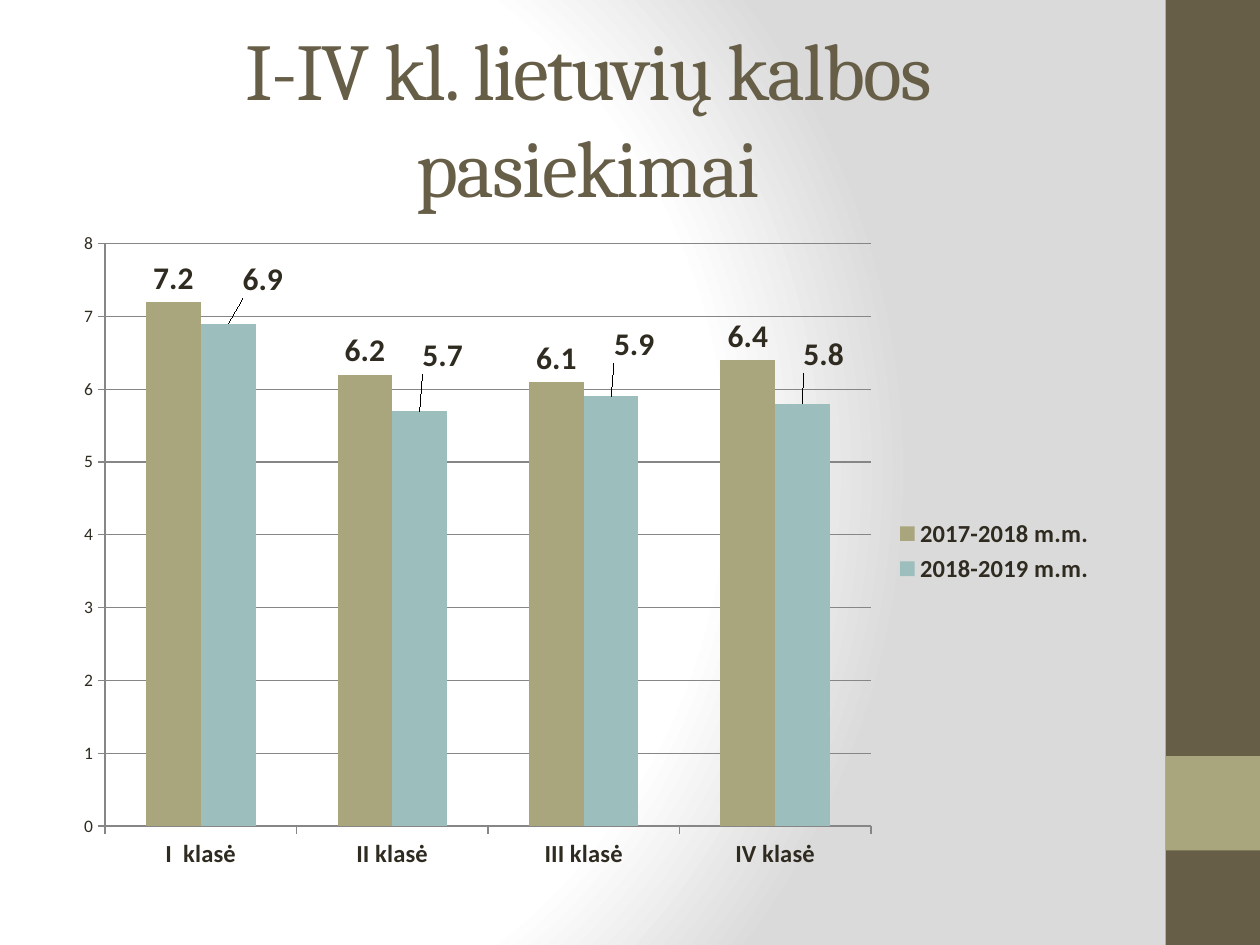
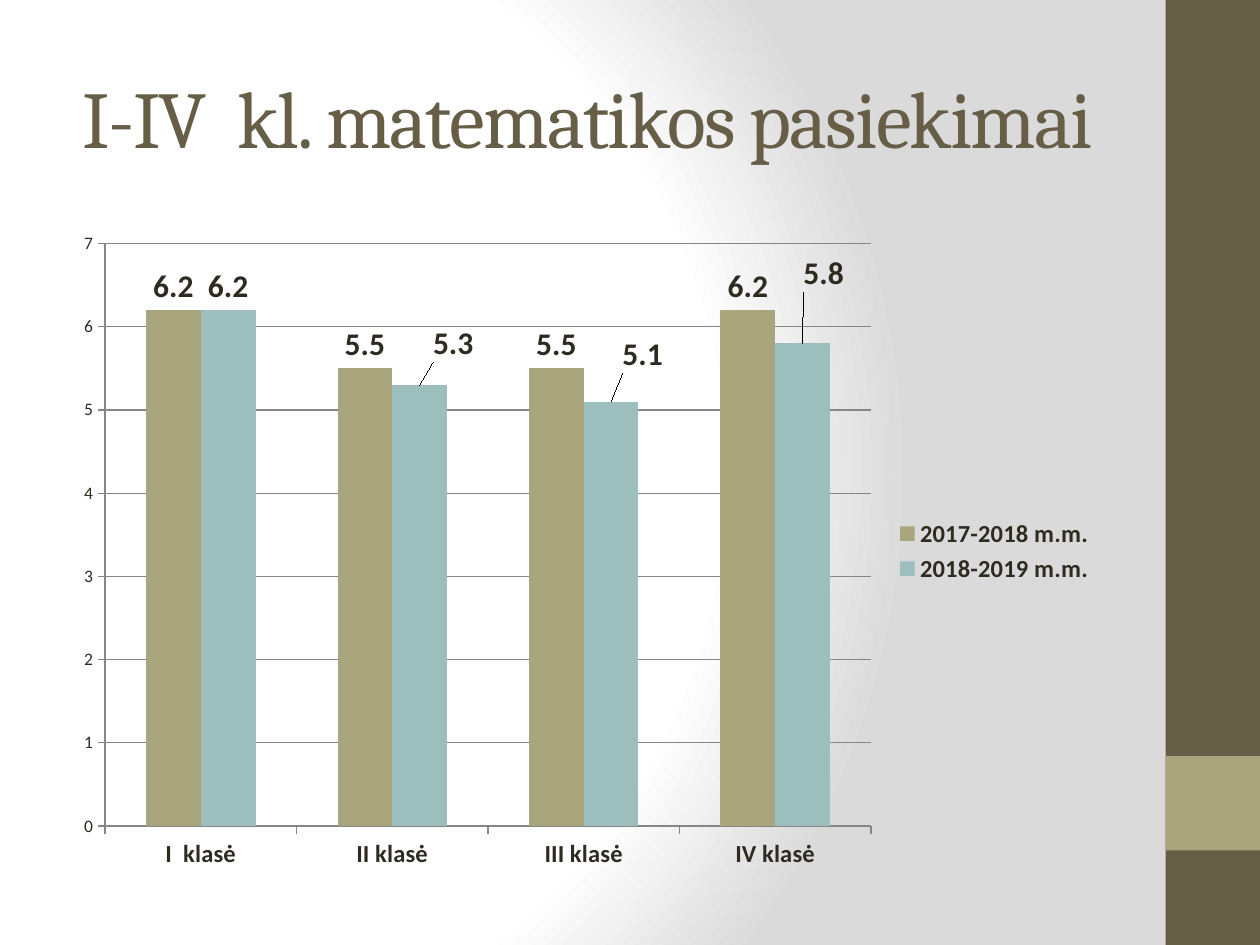
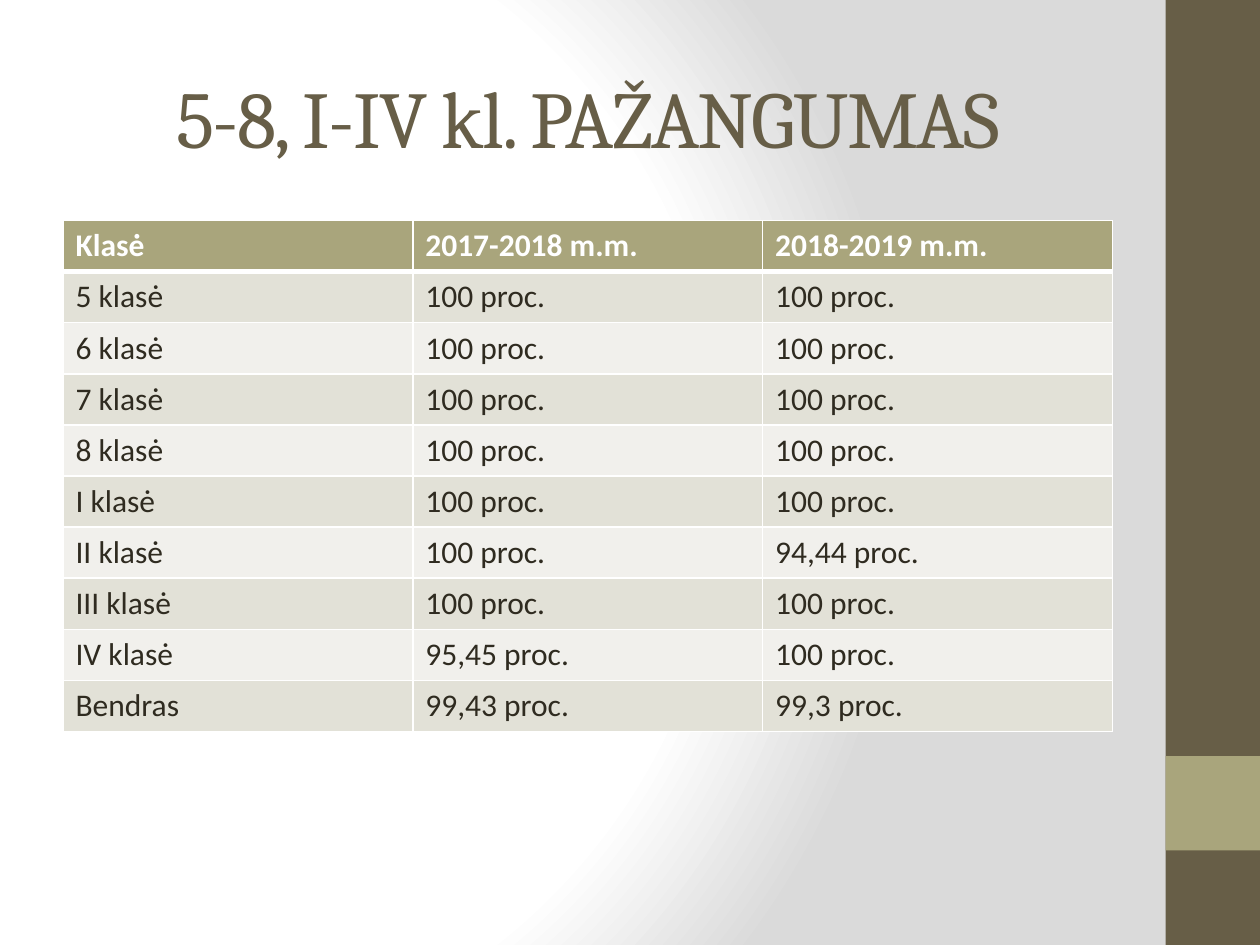
from pptx import Presentation
from pptx.chart.data import CategoryChartData
from pptx.dml.color import RGBColor
from pptx.enum.chart import XL_CHART_TYPE, XL_LABEL_POSITION, XL_LEGEND_POSITION, XL_TICK_MARK
from pptx.enum.shapes import MSO_SHAPE
from pptx.enum.text import MSO_ANCHOR, MSO_AUTO_SIZE, PP_ALIGN
from pptx.oxml import parse_xml
from pptx.oxml.ns import nsdecls
from pptx.util import Inches, Pt

RECTANGLE = MSO_SHAPE.RECTANGLE
CLUSTERED = XL_CHART_TYPE.COLUMN_CLUSTERED
OUTSIDE_END = XL_LABEL_POSITION.OUTSIDE_END
LEGEND_RIGHT = XL_LEGEND_POSITION.RIGHT
TICK_OUT = XL_TICK_MARK.OUTSIDE
MIDDLE = MSO_ANCHOR.MIDDLE
NO_FIT = MSO_AUTO_SIZE.NONE
CENTER = PP_ALIGN.CENTER

COLORS = {
    "brown": "675E47", "olive": "A9A57C", "teal": "9CBEBD", "ink": "2F2B20",
    "white": "FFFFFF", "fog": "DADADA", "axis": "868686",
    "band_dark": "E2E1D7", "band_light": "F1F0EC",
}
HEADING_FONT, BODY_FONT = "Cambria", "Calibri"
COLUMNS, ROWS = 40, 30
CONTENT_LEFT, CONTENT_WIDTH, CONTENT_TOP = 2, 33.32, 7
YEARS = ("2017-2018 m.m.", "2018-2019 m.m.")
CLASSES = ("I  klasė", "II klasė", "III klasė", "IV klasė")


def rgb(name):
    """Return the named colour."""
    return RGBColor.from_string(COLORS[name])


def style_font(font, size, color="ink", bold=False, face=BODY_FONT):
    """Apply the deck's type settings to a font."""
    font.name, font.size, font.bold = face, Pt(size), bold
    font.color.rgb = rgb(color)


class Deck:
    """Hold the shared style and the current slide."""

    def __init__(self):
        """Set up the slide size, background and side bands."""
        self.prs = Presentation()
        self.prs.slide_width, self.prs.slide_height = Inches(10), Inches(7.5)
        self.slide = None
        self.paint_background()

    def box(self, left, top, width, height):
        """Turn grid columns and rows into slide lengths."""
        column, row = self.prs.slide_width / COLUMNS, self.prs.slide_height / ROWS
        return [round(n * unit) for n, unit in
                ((left, column), (top, row), (width, column), (height, row))]

    def paint_background(self):
        """Give the master its radial gradient."""
        fill = self.prs.slide_master.background.fill
        fill.gradient()
        gradient = self.prs.slide_master.element.xpath("./p:cSld/p:bg//a:gradFill")[0]
        stops = "".join(
            f'<a:gs pos="{share * 1000}"><a:srgbClr val="{COLORS[name]}"/></a:gs>'
            for share, name in ((0, "white"), (75, "white"), (100, "fog")))
        gradient.getparent().replace(gradient, parse_xml(
            f'<a:gradFill {nsdecls("a")} rotWithShape="1"><a:gsLst>{stops}</a:gsLst>'
            '<a:path path="circle"><a:fillToRect l="20000" t="50000" r="100000" b="50000"/>'
            '</a:path></a:gradFill>'))

    def master_band(self, top, height, color, order):
        """Place a side band behind everything on the master."""
        band = self.slide.shapes.add_shape(RECTANGLE, *self.box(37, top, 3, height))
        band.shadow.inherit = False
        band.fill.solid()
        band.fill.fore_color.rgb = rgb(color)
        band.line.fill.background()
        band.element.xpath("./p:nvSpPr/p:cNvPr")[0].set("id", str(20 + order))
        self.prs.slide_master.shapes.element.insert(2 + order, band.element)

    def add_slide(self, heading):
        """Start a slide with its title."""
        first = self.slide is None
        self.slide = self.prs.slides.add_slide(self.prs.slide_layouts[5])
        if first:
            self.master_band(0, ROWS, "brown", 0)
            self.master_band(24, 3, "olive", 1)
        title = self.slide.shapes.title
        title.left, title.top, title.width, title.height = self.box(
            CONTENT_LEFT, 1.2, CONTENT_WIDTH, 5)
        frame = title.text_frame
        frame.word_wrap, frame.auto_size, frame.vertical_anchor = True, NO_FIT, MIDDLE
        paragraph = frame.paragraphs[0]
        paragraph.alignment = CENTER
        run = paragraph.add_run()
        run.text = heading
        style_font(run.font, 46, "brown", face=HEADING_FONT)
        run.font._element.set("spc", "-100")

    def results_chart(self, results, label_shifts):
        """Draw yearly results; shifts map a class to percent moves of its label."""
        data = CategoryChartData()
        data.categories = CLASSES
        for year, marks in zip(YEARS, results):
            data.add_series(year + " ", marks)
        chart = self.slide.shapes.add_chart(
            CLUSTERED, *self.box(CONTENT_LEFT, CONTENT_TOP, CONTENT_WIDTH, 21), data).chart
        chart.has_title = False
        style_font(chart.font, 10)
        chart.has_legend = True
        chart.legend.position = LEGEND_RIGHT
        chart.legend.include_in_layout = False
        style_font(chart.legend.font, 14, bold=True)
        for axis in (chart.category_axis, chart.value_axis):
            axis.major_tick_mark = TICK_OUT
            axis.format.line.color.rgb = rgb("axis")
        style_font(chart.category_axis.tick_labels.font, 14, bold=True)
        chart.value_axis.has_major_gridlines = True
        chart.value_axis.major_gridlines.format.line.color.rgb = rgb("axis")
        plot = chart.plots[0]
        plot.gap_width, plot.vary_by_categories = 150, False
        for series, color in zip(plot.series, ("olive", "teal")):
            series.format.fill.solid()
            series.format.fill.fore_color.rgb = rgb(color)
            series.data_labels.show_value = True
            series.data_labels.position = OUTSIDE_END
            style_font(series.data_labels.font, 18, bold=True)
        latest = plot.series[1]
        for index in label_shifts:
            label = latest.points[index].data_label
            label.position = OUTSIDE_END
            style_font(label.font, 18, bold=True)
        moved = chart.element.xpath(".//c:ser[2]//c:dLbl")
        for label, (right, up) in zip(moved, label_shifts.values()):
            label.insert(1, parse_xml(
                f'<c:layout {nsdecls("c")}><c:manualLayout><c:x val="{right / 100:.3f}"/>'
                f'<c:y val="{-up / 100:.3f}"/></c:manualLayout></c:layout>'))

    def cell_borders(self, cell, top, bottom):
        """Draw white borders of the given top and bottom widths."""
        for side, width in (("L", 1), ("R", 1), ("T", top), ("B", bottom)):
            cell._tc.get_or_add_tcPr().append(parse_xml(
                f'<a:ln{side} {nsdecls("a")} w="{Pt(width)}"><a:solidFill>'
                f'<a:srgbClr val="{COLORS["white"]}"/></a:solidFill></a:ln{side}>'))

    def progress_table(self, rows):
        """Draw a banded table whose first row is the header."""
        table = self.slide.shapes.add_table(
            len(rows), len(rows[0]),
            *self.box(CONTENT_LEFT, CONTENT_TOP, CONTENT_WIDTH, 1.622 * len(rows))).table
        for r, row in enumerate(rows):
            header = r == 0
            band = "olive" if header else "band_dark" if r % 2 else "band_light"
            for c, words in enumerate(row):
                cell = table.cell(r, c)
                self.cell_borders(cell, 3 if r == 1 else 1, 3 if header else 1)
                cell.fill.solid()
                cell.fill.fore_color.rgb = rgb(band)
                run = cell.text_frame.paragraphs[0].add_run()
                run.text = words
                style_font(run.font, 18, "white" if header else "ink", header)


def main():
    """Build the three slides."""
    deck = Deck()
    deck.add_slide("I-IV kl. lietuvių kalbos pasiekimai")
    deck.results_chart(
        ((7.2, 6.2, 6.1, 6.4), (6.9, 5.7, 5.9, 5.8)),
        {0: (3.3, 3), 1: (2.2, 4.8), 2: (2.2, 4.2), 3: (2, 3.8)})
    deck.add_slide("I-IV  kl. matematikos pasiekimai")
    deck.results_chart(
        ((6.2, 5.5, 5.5, 6.2), (6.2, 5.3, 5.1, 5.8)),
        {1: (3.2, 2.7), 2: (3, 3.5), 3: (2, 7)})
    deck.add_slide("5-8, I-IV kl. PAŽANGUMAS")
    full = "100 proc."
    progress = {f"{name} klasė": [full, full]
                for name in ("5", "6", "7", "8", "I", "II", "III", "IV")}
    progress["II klasė"][1] = "94,44 proc."
    progress["IV klasė"][0] = "95,45 proc."
    progress["Bendras"] = ["99,43 proc.", "99,3 proc."]
    deck.progress_table([("Klasė", *YEARS)] + [(name, *marks) for name, marks in progress.items()])
    deck.prs.save("out.pptx")


if __name__ == "__main__":
    main()
